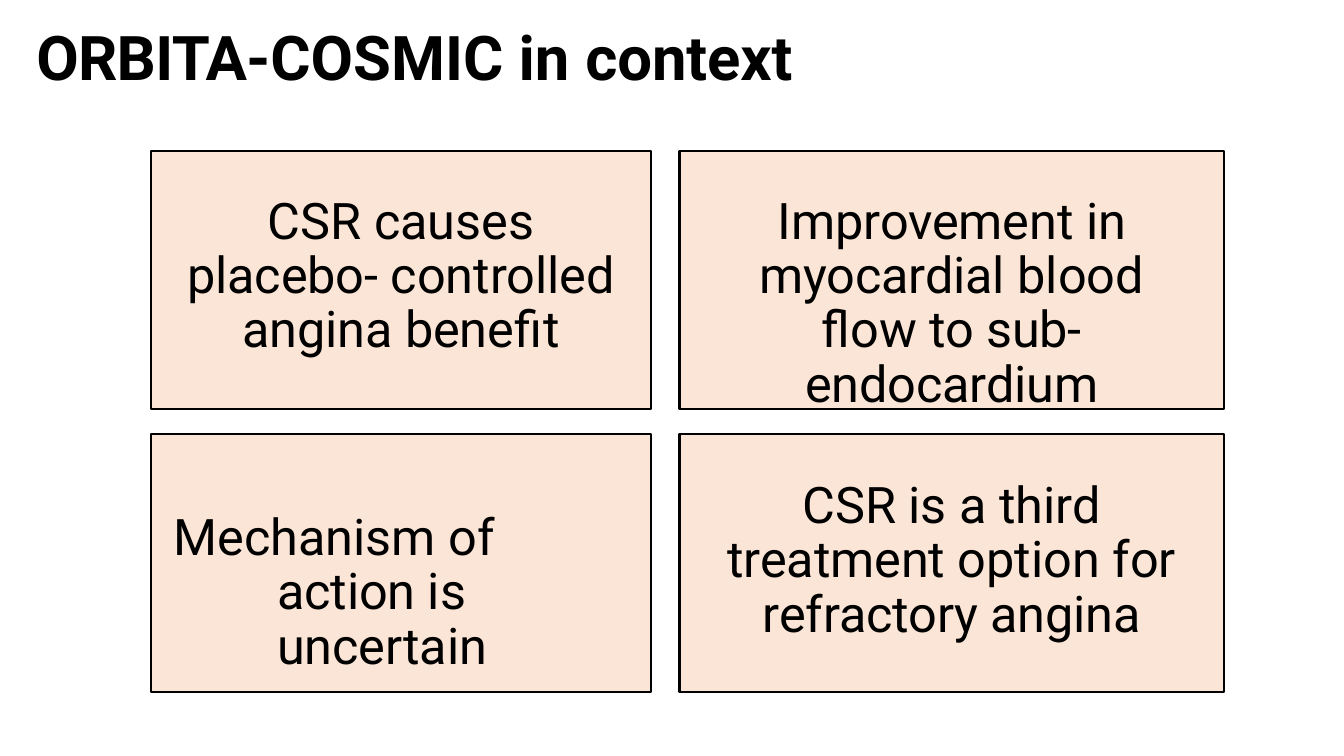
from pptx import Presentation
from pptx.dml.color import RGBColor
from pptx.enum import shapes, text
from pptx.util import Inches, Pt

COLOURS = {"ink": "000000", "card": "FBE5D6"}
FONT = "Roboto"

COLUMNS = [(1.5, 4.96), (6.74, 5.4)]  # left, width
ROWS = [1.5, 4.31]
CARD_HEIGHT = 2.56

TITLE = [("ORBITA-", -0.5), ("COSMIC in ", 0), ("context", -0.1)]

# column, row, top inset, left and right margin, runs with letter spacing
CENTRED_CARDS = [
    (0, 0, 0.44, 0.29, [("CSR causes ", 0), ("placebo- ", -0.1),
                        ("controlled ", 0), ("angina benefit", -0.1)]),
    (1, 0, 0.44, 0.32, [("Improvement ", -0.1), ("in ", -0.2),
                        ("myocardial ", -0.1), ("blood ", 0), ("flow ", -0.2),
                        ("to ", 0), ("sub-", -0.2), ("endocardium", -0.1)]),
    (1, 1, 0.45, 0.13, [("CSR is a third ", 0), ("treatment ", -0.1),
                        ("option for ", 0), ("refractory angina", -0.1)]),
]
MECHANISM = [("Mechanism of ", 0), ("action ", -0.1), ("is ", 0),
             ("uncertain", -0.1)]


def colour(name):
    return RGBColor.from_string(COLOURS[name])


def prepare_frame(frame, top_inset):
    frame.word_wrap = True
    frame.auto_size = text.MSO_AUTO_SIZE.NONE
    frame.vertical_anchor = text.MSO_ANCHOR.TOP
    frame.margin_left = frame.margin_right = frame.margin_bottom = 0
    frame.margin_top = Inches(top_inset)


def add_runs(paragraph, runs, size, bold=False):
    for words, spacing in runs:
        run = paragraph.add_run()
        run.text = words
        run.font.name = FONT
        run.font.size = Pt(size)
        run.font.bold = bold
        run.font.color.rgb = colour("ink")
        run.font._element.set("spc", str(round(spacing * 100)))


def set_indents(paragraph, left, right=0, first=0):
    properties = paragraph._p.get_or_add_pPr()
    for name, value in (("marL", left), ("marR", right), ("indent", first)):
        properties.set(name, str(Inches(value)))


def add_title(slide):
    title = slide.shapes.title
    title.left, title.top = Inches(0.35), Inches(0.18)
    title.width, title.height = Inches(8.83), Inches(0.76)
    prepare_frame(title.text_frame, 0.01)
    paragraph = title.text_frame.paragraphs[0]
    paragraph.alignment = text.PP_ALIGN.LEFT
    paragraph.space_before = Pt(1)
    set_indents(paragraph, 0.01)
    add_runs(paragraph, TITLE, 44, bold=True)


def add_card(slide, column, row, top_inset, runs):
    """Draw one box of the grid and return its paragraph."""
    left, width = COLUMNS[column]
    card = slide.shapes.add_shape(
        shapes.MSO_SHAPE.RECTANGLE, Inches(left), Inches(ROWS[row]),
        Inches(width), Inches(CARD_HEIGHT))
    card.shadow.inherit = False
    card.fill.solid()
    card.fill.fore_color.rgb = colour("card")
    card.line.color.rgb = colour("ink")
    card.line.width = Pt(1.5)
    prepare_frame(card.text_frame, top_inset)
    paragraph = card.text_frame.paragraphs[0]
    add_runs(paragraph, runs, 36)
    return paragraph


def main():
    presentation = Presentation()
    presentation.slide_width = Inches(13.33)
    presentation.slide_height = Inches(7.5)
    slide = presentation.slides.add_slide(presentation.slide_layouts[5])
    add_title(slide)

    for column, row, top_inset, margin, runs in CENTRED_CARDS:
        paragraph = add_card(slide, column, row, top_inset, runs)
        paragraph.alignment = text.PP_ALIGN.CENTER
        paragraph.line_spacing = 0.9
        paragraph.space_before = Pt(32)
        set_indents(paragraph, margin, margin)

    paragraph = add_card(slide, 0, 1, 0.76, MECHANISM)
    paragraph.alignment = text.PP_ALIGN.LEFT
    paragraph.line_spacing = Pt(38.9)
    set_indents(paragraph, 1.25, 1.24, -1.03)

    presentation.save("out.pptx")


if __name__ == "__main__":
    main()
